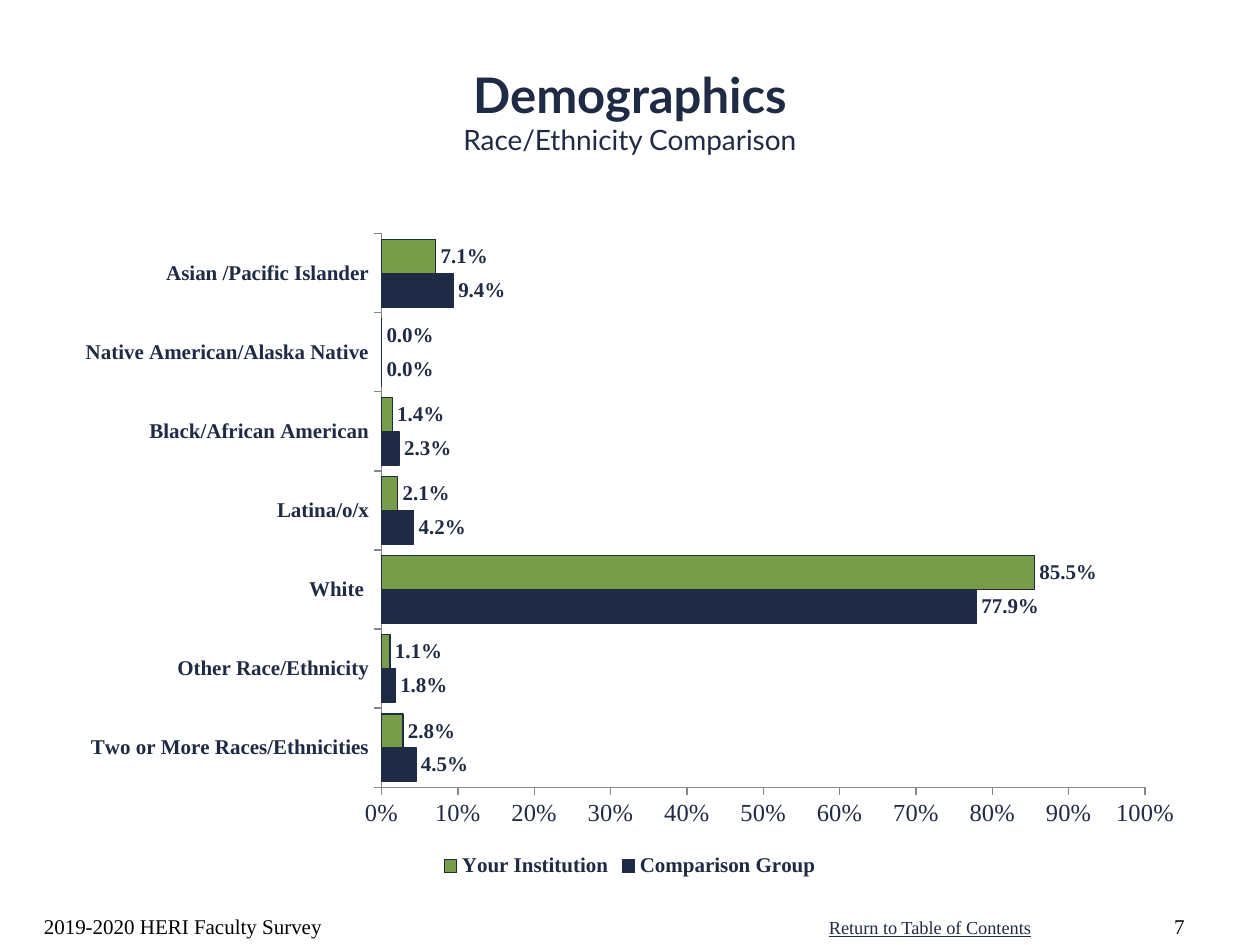
import pptx
import pptx.chart.data
import pptx.dml.color
import pptx.enum.chart
import pptx.enum.text
import pptx.util
from lxml import etree

Inches, Pt = pptx.util.Inches, pptx.util.Pt
ALIGN = pptx.enum.text.PP_ALIGN
ANCHOR = pptx.enum.text.MSO_ANCHOR
CHART = pptx.enum.chart
COLORS = {"navy": "1F2A44", "green": "789D4A", "black": "000000", "gray": "868686"}
SERIF, SANS = "Times New Roman", "Lato"

CATS = ["Two or More Races/Ethnicities", "Other Race/Ethnicity", "White ",
        "Latina/o/x", "Black/African American",
        "Native American/Alaska Native", "Asian /Pacific Islander"]
SERIES = [
    ("Comparison Group", "navy", [0.045, 0.018, 0.779, 0.042, 0.023, 0, 0.094]),
    ("Your Institution", "green", [0.028, 0.011, 0.855, 0.021, 0.014, 0, 0.071]),
]


def color(name):
    return pptx.dml.color.RGBColor.from_string(COLORS[name])


def style(font, size, tint="navy", face=SERIF, bold=False):
    font.name, font.size, font.bold = face, Pt(size), bold
    font.color.rgb = color(tint)


def add_box(slide, box, anchor, align=ALIGN.LEFT, wrap=True):
    """Add a text box and return its first paragraph."""
    frame = slide.shapes.add_textbox(*box).text_frame
    frame.word_wrap = wrap
    frame.vertical_anchor = anchor
    para = frame.paragraphs[0]
    para.alignment = align
    return para


def add_run(para, text, size, **look):
    run = para.add_run()
    run.text = text
    style(run.font, size, **look)
    return run


def add_title(slide, left, top, width, height):
    para = add_box(slide, (left, top, width, height), ANCHOR.MIDDLE, ALIGN.CENTER)
    add_run(para, "Demographics", 28, face=SANS, bold=True)
    para.add_line_break()
    add_run(para, "Race/Ethnicity Comparison", 16, face=SANS)


def add_footer(slide, left, top, width, height):
    para = add_box(slide, (left, top, Inches(3.17), height), ANCHOR.BOTTOM)
    add_run(para, "2019-2020 HERI Faculty Survey", 12, tint="black")

    box = (left + Inches(6.23), top + Inches(0.22), Inches(1.82), Inches(0.28))
    para = add_box(slide, box, ANCHOR.TOP, wrap=False)
    add_run(para, "Return to Table of Contents", 10.5).font.underline = True

    side = Inches(0.5)
    box = (left + width - side, top, side, height)
    para = add_box(slide, box, ANCHOR.BOTTOM, ALIGN.RIGHT)
    add_run(para, "7", 12, tint="black")


def style_axis(axis, size, bold):
    style(axis.tick_labels.font, size, bold=bold)
    axis.has_major_gridlines = False
    axis.major_tick_mark = CHART.XL_TICK_MARK.OUTSIDE
    axis.minor_tick_mark = CHART.XL_TICK_MARK.NONE
    axis.format.line.color.rgb = color("gray")
    axis.format.line.width = Pt(0.75)


def style_series(series, tint):
    fill = series.format.fill
    fill.solid()
    fill.fore_color.rgb = color(tint)
    series.format.line.color.rgb = color("navy")
    series.format.line.width = Pt(0.75)
    series.invert_if_negative = False
    labels = series.data_labels
    labels.show_value = True
    labels.number_format = "0.0%"
    labels.number_format_is_linked = False
    labels.position = CHART.XL_LABEL_POSITION.OUTSIDE_END
    style(labels.font, 12, bold=True)


def add_bars(slide, left, top, width, height):
    data = pptx.chart.data.CategoryChartData()
    data.categories = CATS
    for name, _, values in SERIES:
        data.add_series(name, values)
    kind = CHART.XL_CHART_TYPE.BAR_CLUSTERED
    chart = slide.shapes.add_chart(kind, left, top, width, height, data).chart
    style(chart.font, 14)
    chart.has_title = False

    plot = chart.plots[0]
    plot.gap_width = 34
    plot.vary_by_categories = False
    for series, (_, tint, _) in zip(plot.series, SERIES):
        style_series(series, tint)

    style_axis(chart.category_axis, 12, True)
    axis = chart.value_axis
    style_axis(axis, 14, False)
    axis.minimum_scale, axis.maximum_scale, axis.major_unit = 0, 1, 0.1
    axis.tick_labels.number_format = "0%"
    axis.tick_labels.number_format_is_linked = False

    chart.has_legend = True
    chart.legend.position = CHART.XL_LEGEND_POSITION.BOTTOM
    chart.legend.include_in_layout = False
    style(chart.legend.font, 12, bold=True)


def main():
    deck = pptx.Presentation()
    deck.slide_width, deck.slide_height = Inches(10), Inches(7.5)
    slide = deck.slides.add_slide(deck.slide_layouts[6])
    add_title(slide, 0, Inches(0.25), Inches(10), Inches(1.25))
    add_bars(slide, Inches(0.5), Inches(1.75), Inches(9), Inches(5.25))
    add_footer(slide, Inches(0.25), Inches(7), Inches(9.25), Inches(0.5))
    deck.save("out.pptx")


if __name__ == "__main__":
    main()
